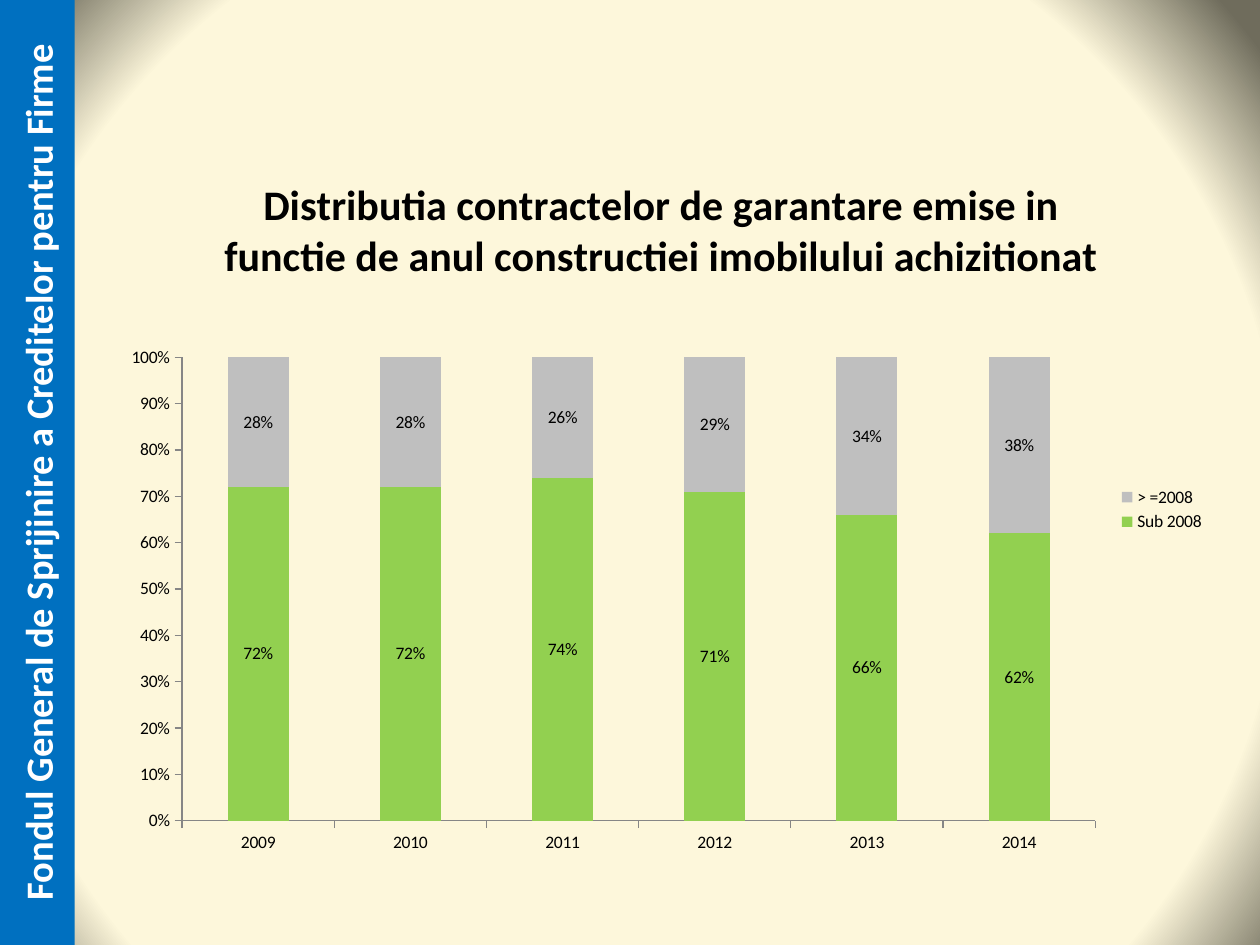
from typing import NamedTuple

from pptx import Presentation
from pptx.chart.data import CategoryChartData as ChartData
from pptx.dml.color import RGBColor as Rgb
from pptx.enum.chart import XL_CHART_TYPE as Kind, XL_LEGEND_POSITION as Side
from pptx.enum.chart import XL_LABEL_POSITION as Spot, XL_TICK_MARK as Tick
from pptx.enum.shapes import MSO_SHAPE as Shape
from pptx.enum.text import MSO_ANCHOR as Anchor, PP_ALIGN as Align
from pptx.oxml import parse_xml
from pptx.oxml.ns import nsdecls, qn
from pptx.util import Cm, Pt

FONT = "Calibri"
HEX = {
    "black": "000000", "white": "FFFFFF", "blue": "0070C0",
    "green": "92D050", "silver": "BFBFBF", "axis": "868686",
    "cream": "FFF9DA", "sand": "FDF7DB", "olive": "6F6C5C",
}
YEARS = ["2009", "2010", "2011", "2012", "2013", "2014"]
GLOW = [(0, "cream"), (83, "sand"), (100, "olive")]


class Series(NamedTuple):
    name: str
    color: str
    vals: list[float]


SERIES = [
    Series("Sub 2008", "green", [0.72, 0.72, 0.74, 0.71, 0.66, 0.62]),
    Series("> =2008", "silver", [0.28, 0.28, 0.26, 0.29, 0.34, 0.38]),
]


def style(font, size: float, color: str = "black", bold: bool = False) -> None:
    font.name, font.size, font.bold = FONT, Pt(size), bold
    font.color.rgb = Rgb.from_string(HEX[color])


def write(frame, text: str, *, size: float, color: str = "black",
          bold: bool = False) -> None:
    par = frame.paragraphs[0]
    par.alignment = Align.CENTER
    run = par.add_run()
    run.text = text
    style(run.font, size, color, bold)


def paint(fill, color: str) -> None:
    fill.solid()
    fill.fore_color.rgb = Rgb.from_string(HEX[color])


def add_glow(slide) -> None:
    """Fill the background with a radial gradient."""
    slide.background.fill.gradient()
    stops = "".join(
        f'<a:gs pos="{pos * 1000}"><a:srgbClr val="{HEX[color]}"/></a:gs>'
        for pos, color in GLOW)
    old = slide.element.find(".//" + qn("a:gradFill"))
    old.getparent().replace(old, parse_xml(
        f'<a:gradFill {nsdecls("a")} rotWithShape="1"><a:gsLst>{stops}</a:gsLst>'
        '<a:path path="circle"><a:fillToRect l="10000" t="110000" r="10000" '
        'b="100000"/></a:path></a:gradFill>'))


def add_banner(slide, text: str) -> None:
    """Draw the vertical strip along the left edge."""
    bar = slide.shapes.add_shape(
        Shape.RECTANGLE, Cm(-8.77), Cm(8.77), Cm(19.05), Cm(1.5))
    bar.rotation = 270
    bar.shadow.inherit = False
    paint(bar.fill, "blue")
    bar.line.fill.background()
    bar.text_frame.vertical_anchor = Anchor.MIDDLE
    bar.text_frame.word_wrap = True
    write(bar.text_frame, text, size=22, color="white", bold=True)


def set_plot(chart, x: float, y: float, w: float, h: float) -> None:
    """Place the inner plot area, in fractions of the chart."""
    area = chart.element.find(".//" + qn("c:plotArea"))
    for old in area.findall(qn("c:layout")):
        area.remove(old)
    parts = "".join(f'<c:{tag} val="{val}"/>' for tag, val in (
        ("layoutTarget", "inner"), ("xMode", "edge"), ("yMode", "edge"),
        ("x", x), ("y", y), ("w", w), ("h", h)))
    area.insert(0, parse_xml(
        f'<c:layout {nsdecls("c")}><c:manualLayout>{parts}'
        '</c:manualLayout></c:layout>'))


def add_chart(slide, title: str) -> None:
    data = ChartData(number_format="0%")
    data.categories = YEARS
    for item in SERIES:
        data.add_series(item.name, item.vals)
    chart = slide.shapes.add_chart(
        Kind.COLUMN_STACKED_100, Cm(2.1), Cm(2.97), Cm(22.45), Cm(14.6),
        data).chart
    style(chart.font, 10)
    chart.has_title = True
    write(chart.chart_title.text_frame, title, size=24, bold=True)
    chart.chart_title.include_in_layout = False
    chart.has_legend = True
    chart.legend.position = Side.RIGHT
    chart.legend.include_in_layout = False

    plot = chart.plots[0]
    plot.gap_width, plot.overlap = 150, 100
    plot.vary_by_categories = False
    for item, bars in zip(SERIES, plot.series):
        paint(bars.format.fill, item.color)
        tags = bars.data_labels
        tags.show_value = True
        tags.number_format, tags.number_format_is_linked = "0%", False
        tags.position = Spot.CENTER
        style(tags.font, 10)

    for axis in (chart.category_axis, chart.value_axis):
        axis.has_major_gridlines = False
        axis.major_tick_mark = Tick.OUTSIDE
        axis.format.line.color.rgb = Rgb.from_string(HEX["axis"])
    scale = chart.value_axis
    scale.minimum_scale, scale.maximum_scale, scale.major_unit = 0, 1, 0.1
    scale.tick_labels.number_format = "0%"
    scale.tick_labels.number_format_is_linked = False
    set_plot(chart, 0.07, 0.29, 0.82, 0.64)


def main() -> None:
    deck = Presentation()
    deck.slide_width, deck.slide_height = Cm(25.4), Cm(19.05)
    slide = deck.slides.add_slide(deck.slide_layouts[6])
    add_glow(slide)
    add_chart(slide, "Distributia contractelor de garantare emise in "
                     "functie de anul constructiei imobilului achizitionat")
    add_banner(slide, "Fondul General de Sprijinire a Creditelor pentru Firme")
    deck.save("out.pptx")


if __name__ == "__main__":
    main()
